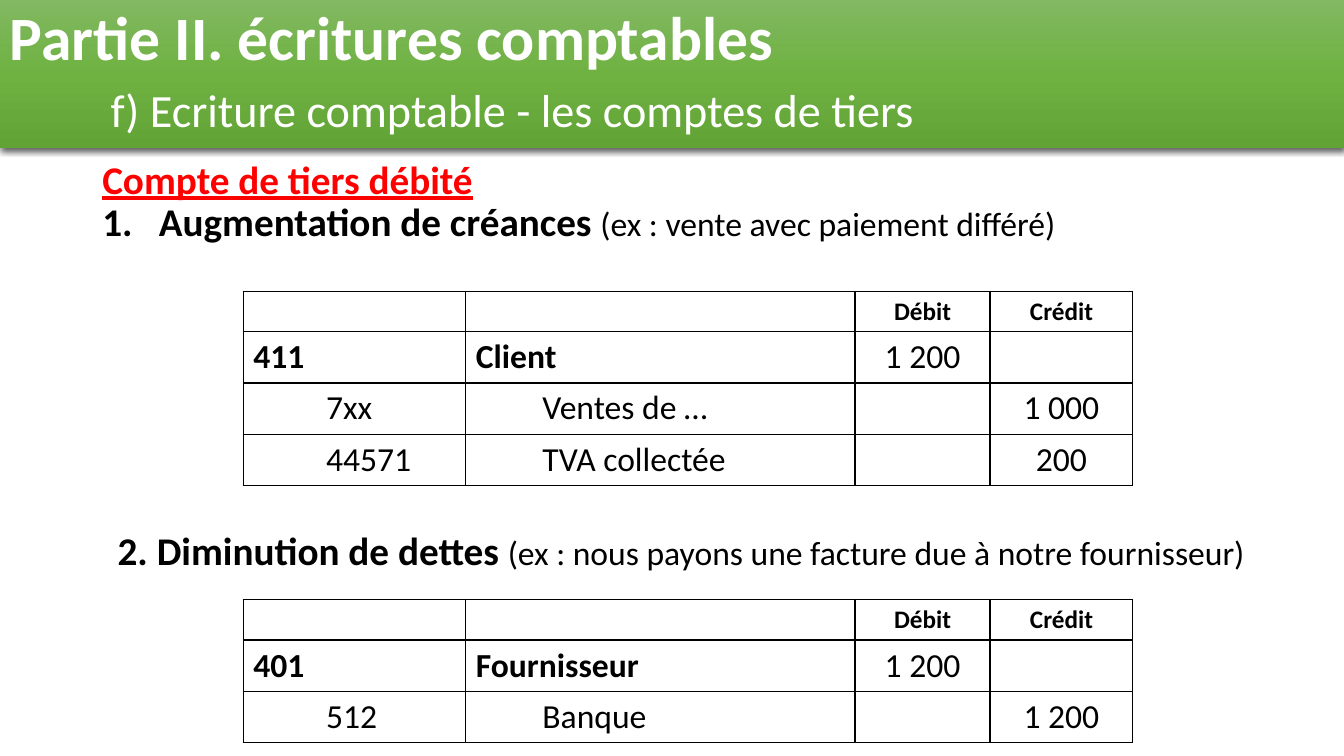
from dataclasses import dataclass

from pptx import Presentation
from pptx.dml.color import RGBColor
from pptx.enum.shapes import MSO_SHAPE
from pptx.enum.text import MSO_ANCHOR, PP_ALIGN
from pptx.oxml import parse_xml
from pptx.oxml.ns import nsdecls
from pptx.util import Pt


@dataclass(frozen=True)
class Theme:
    """Colours, font and type sizes of the slide."""

    font: str = "Calibri"
    ink: str = "000000"
    white: str = "FFFFFF"
    accent: str = "FF0000"
    band: tuple = ("81B861", "6FB242", "62A336")
    title: int = 44
    subtitle: int = 33
    heading: int = 28
    body: int = 24
    label: int = 18


THEME = Theme()
COLUMNS = (52, 107, 47.5, 230.5, 96.5, 102)
HEADER_HEIGHT, ENTRY_HEIGHT = 29, 36.6
TABLE_LEFT = 173.8

SALE = (
    ("411", "Client", "1 200", ""),
    ("7xx", "Ventes de …", "", "1 000"),
    ("44571", "TVA collectée", "", "200"),
)
PAYMENT = (
    ("401", "Fournisseur", "1 200", ""),
    ("512", "Banque", "", "1 200"),
)


def assign(target, formats):
    """Set each attribute named in formats on target."""
    for name, value in formats.items():
        setattr(target, name, value)


def add_run(paragraph, text, size, color=THEME.ink, **formats):
    """Append a run in the theme font."""
    run = paragraph.add_run()
    run.text = text
    assign(run.font, {"name": THEME.font, "size": Pt(size), **formats})
    run.font.color.rgb = RGBColor.from_string(color)


def add_heading(slide, left, top, width, height):
    """Add a wrapping text frame for headings."""
    frame = slide.shapes.add_textbox(Pt(left), Pt(top), Pt(width), Pt(height)).text_frame
    frame.word_wrap = True
    frame.paragraphs[0].line_spacing = 0.9
    return frame


def add_example(paragraph, title, example):
    """Write a bold heading followed by its example in brackets."""
    paragraph.line_spacing = 0.9
    add_run(paragraph, title, THEME.heading, bold=True)
    add_run(paragraph, example, THEME.body, bold=False)


def number(paragraph, indent):
    """Give a paragraph an automatic number with a hanging indent."""
    properties = paragraph._p.get_or_add_pPr()
    properties.set("marL", str(Pt(indent)))
    properties.set("indent", str(-Pt(indent)))
    properties.append(parse_xml(f'<a:buAutoNum {nsdecls("a")} type="arabicPeriod"/>'))


def frame_cell(cell, open_sides):
    """Draw the cell borders except on the open sides and clear the fill."""
    properties = cell._tc.get_or_add_tcPr()
    ink = f'<a:solidFill><a:srgbClr val="{THEME.ink}"/></a:solidFill>'
    for side in "LRTB":
        paint = "<a:noFill/>" if side in open_sides else ink
        properties.append(
            parse_xml(f'<a:ln{side} {nsdecls("a")} w="{Pt(1)}">{paint}</a:ln{side}>')
        )
    cell.fill.background()


def write_cell(cell, text, size, bold, align=PP_ALIGN.LEFT):
    """Write text in a table cell, if there is any."""
    if text:
        paragraph = cell.text_frame.paragraphs[0]
        paragraph.alignment = align
        add_run(paragraph, text, size, bold=bold)


def add_journal(slide, top, entries):
    """Add a journal table: header, main account, then indented accounts."""
    heights = [HEADER_HEIGHT] + [ENTRY_HEIGHT] * len(entries)
    journal = slide.shapes.add_table(
        len(heights), len(COLUMNS), Pt(TABLE_LEFT), Pt(top), Pt(sum(COLUMNS)), Pt(sum(heights))
    ).table
    assign(journal, {"first_row": False, "horz_banding": False})
    for column, width in zip(journal.columns, COLUMNS):
        column.width = Pt(width)
    for row, height in zip(journal.rows, heights):
        row.height = Pt(height)

    for index, texts in enumerate((("", "", "Débit", "Crédit"), *entries)):
        indented = index > 1
        for column in range(len(COLUMNS)):
            open_side = "RL"[column % 2] if indented and column < 4 else ""
            frame_cell(journal.cell(index, column), open_side)
        for first in (0, 2):
            if not indented:
                journal.cell(index, first).merge(journal.cell(index, first + 1))
        size = THEME.body if index else THEME.label
        for position, text in enumerate(texts[:2]):
            write_cell(journal.cell(index, 2 * position + indented), text, size, not indented)
        for column, text in enumerate(texts[2:], 4):
            write_cell(journal.cell(index, column), text, size, index == 0, PP_ALIGN.CENTER)


def add_band(slide, width, height):
    """Add the shaded title band with its title and subtitle."""
    band = slide.shapes.add_shape(MSO_SHAPE.RECTANGLE, 0, 0, Pt(width), Pt(height))
    band.line.fill.background()
    band.shadow.inherit = False
    stops = "".join(
        f'<a:gs pos="{50000 * index}"><a:srgbClr val="{color}"/></a:gs>'
        for index, color in enumerate(THEME.band)
    )
    properties = band._element.spPr
    properties.insert(2, parse_xml(
        f'<a:gradFill {nsdecls("a")}><a:gsLst>{stops}</a:gsLst>'
        '<a:lin ang="5400000" scaled="0"/></a:gradFill>'
    ))
    properties[-1].append(parse_xml(
        f'<a:outerShdw {nsdecls("a")} blurRad="{Pt(4.5)}" dist="{Pt(1.5)}" dir="5400000">'
        f'<a:srgbClr val="{THEME.ink}"><a:alpha val="63000"/></a:srgbClr></a:outerShdw>'
    ))
    assign(band.text_frame, {"word_wrap": True, "vertical_anchor": MSO_ANCHOR.MIDDLE})
    title = band.text_frame.paragraphs[0]
    assign(title, {"alignment": PP_ALIGN.LEFT, "line_spacing": 0.9})
    title._p.get_or_add_pPr().append(parse_xml(
        f'<a:tabLst {nsdecls("a")}><a:tab pos="{Pt(72)}" algn="l"/></a:tabLst>'
    ))
    add_run(title, "Partie II. écritures comptables", THEME.title, THEME.white, bold=True)
    title.add_line_break()
    add_run(title, "\t", THEME.title, THEME.white, bold=True)
    add_run(title, "f) Ecriture comptable - les comptes de tiers",
            THEME.subtitle, THEME.white, bold=False)


def main():
    """Build the slide and save it."""
    deck = Presentation()
    assign(deck, {"slide_width": Pt(960), "slide_height": Pt(540)})
    slide = deck.slides.add_slide(deck.slide_layouts[6])

    receivables = add_heading(slide, 66, 111, 828, 148)
    add_run(receivables.paragraphs[0], "Compte de tiers débité", THEME.heading,
            THEME.accent, bold=True, underline=True)
    increase = receivables.add_paragraph()
    add_example(increase, "Augmentation de créances ", "(ex : vente avec paiement différé)")
    number(increase, 40.5)
    add_journal(slide, 208, SALE)

    debts = add_heading(slide, 77, 376, 828, 148)
    add_example(debts.paragraphs[0], "2. Diminution de dettes ",
                "(ex : nous payons une facture due à notre fournisseur)")
    add_journal(slide, 428.2, PAYMENT)

    add_band(slide, 960, 106)
    deck.save("out.pptx")


if __name__ == "__main__":
    main()
